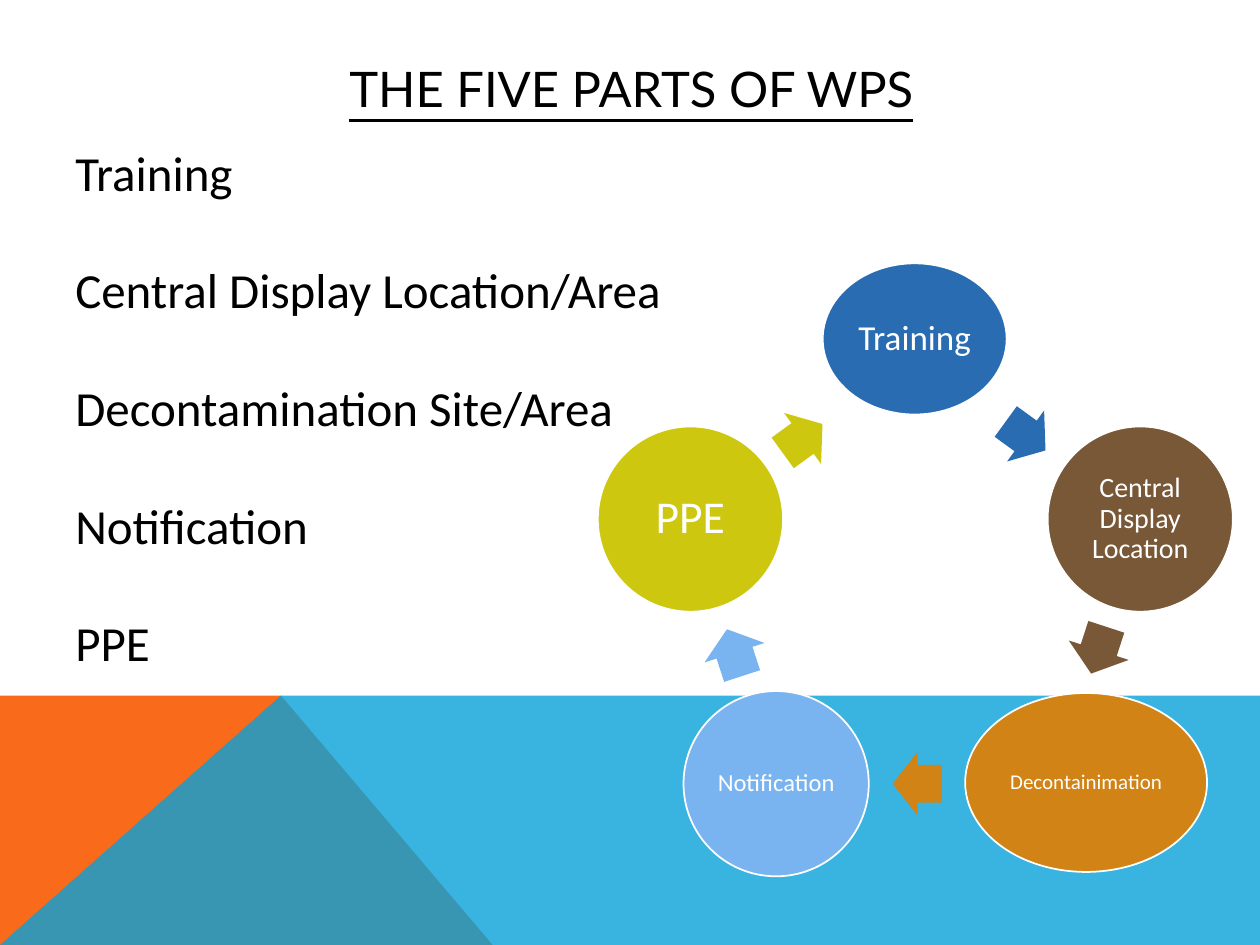
from dataclasses import dataclass

import pptx
import pptx.dml.color
import pptx.enum.shapes
import pptx.enum.text
import pptx.oxml
import pptx.oxml.ns
import pptx.util

Inches = pptx.util.Inches
Pt = pptx.util.Pt
ShapeKind = pptx.enum.shapes.MSO_SHAPE
Align = pptx.enum.text.PP_ALIGN
Anchor = pptx.enum.text.MSO_ANCHOR


@dataclass
class Stage:
    label: str
    color: str
    size: float
    center: tuple[float, float]
    extent: tuple[float, float]
    arrow_center: tuple[float, float]


STAGES = [
    Stage("Training", "2A6CB2", 20, (7.26, 2.69), (1.46, 1.2), (8.14, 3.46)),
    Stage("Central Display Location", "795837", 16, (9.05, 4.12), (1.47, 1.47), (8.72, 5.16)),
    Stage("Decontainimation", "D18316", 12, (8.62, 6.21), (1.92, 1.42), (7.28, 6.22)),
    Stage("Notification", "79B4F0", 14, (6.16, 6.22), (1.47, 1.47), (5.83, 5.18)),
    Stage("PPE", "CDC80F", 26, (5.48, 4.12), (1.47, 1.47), (6.37, 3.48)),
]
PARTS = ["Training", "Central Display Location/Area", "Decontamination Site/Area",
         "Notification", "PPE"]
FIRST_ARROW_ANGLE = 36
ARROW_STEP = 360 / len(STAGES)
ARROW_EXTENT = (0.39, 0.5)


def rgb(value: str):
    return pptx.dml.color.RGBColor.from_string(value)


def paint(shape, color: str, outline: str | None = None, alpha: int = 100) -> None:
    shape.shadow.inherit = False
    shape.fill.solid()
    shape.fill.fore_color.rgb = rgb(color)
    if alpha < 100:
        color_node = shape.fill._xPr.find(".//" + pptx.oxml.ns.qn("a:srgbClr"))
        alpha_node = pptx.oxml.parse_xml(
            f'<a:alpha {pptx.oxml.ns.nsdecls("a")} val="{alpha * 1000}"/>')
        color_node.append(alpha_node)
    if outline:
        shape.line.color.rgb = rgb(outline)
        shape.line.width = Pt(1)
    else:
        shape.line.fill.background()


def write(shape, text: str, *, size: float, font: str = "Calibri", color: str = "000000",
          align=Align.LEFT, anchor=Anchor.TOP, underline: bool = False,
          line_spacing: float = 1.0, space_after: float = 0,
          margin: float | None = None) -> None:
    frame = shape.text_frame
    frame.word_wrap = True
    frame.auto_size = pptx.enum.text.MSO_AUTO_SIZE.NONE
    frame.vertical_anchor = anchor
    if margin is not None:
        frame.margin_left = frame.margin_right = Inches(margin)
        frame.margin_top = frame.margin_bottom = Inches(margin)
    frame.text = text
    for para in frame.paragraphs:
        para.alignment = align
        para.line_spacing = line_spacing
        para.space_before = Pt(0)
        para.space_after = Pt(space_after)
        for span in para.runs:
            span.font.name = font
            span.font.size = Pt(size)
            span.font.color.rgb = rgb(color)
            if underline:
                span.font.underline = True


def add_band(page, points: list[tuple[float, float]], color: str, alpha: int = 100) -> None:
    corners = [(Inches(x), Inches(y)) for x, y in points]
    builder = page.shapes.build_freeform(*corners[0])
    builder.add_line_segments(corners[1:], close=True)
    paint(builder.convert_to_shape(), color, alpha=alpha)


def add_centered(page, kind, center: tuple[float, float], extent: tuple[float, float]):
    (x, y), (width, height) = center, extent
    return page.shapes.add_shape(kind, Inches(x - width / 2), Inches(y - height / 2),
                                 Inches(width), Inches(height))


def add_stage(page, stage: Stage, angle: float) -> None:
    oval = add_centered(page, ShapeKind.OVAL, stage.center, stage.extent)
    paint(oval, stage.color, outline="FFFFFF")
    write(oval, stage.label, size=stage.size, color="FFFFFF", align=Align.CENTER,
          anchor=Anchor.MIDDLE, line_spacing=0.9, margin=0.03)
    arrow = add_centered(page, ShapeKind.RIGHT_ARROW, stage.arrow_center, ARROW_EXTENT)
    arrow.adjustments[0] = 0.6
    arrow.adjustments[1] = 0.5
    arrow.rotation = angle
    paint(arrow, stage.color)


def main() -> None:
    deck = pptx.Presentation()
    deck.slide_width, deck.slide_height = Inches(10), Inches(7.5)
    page = deck.slides.add_slide(deck.slide_layouts[5])

    add_band(page, [(0, 7.5), (0, 5.52), (2.23, 5.52), (3.91, 7.5)], "F96A1B")
    add_band(page, [(0, 7.5), (2.23, 5.52), (10, 5.52), (10, 7.5)], "08A1D9", alpha=80)

    title = page.shapes.title
    title.left, title.top = Inches(0.9), Inches(0.4)
    title.width, title.height = Inches(8.22), Inches(0.6)
    write(title, "THE FIVE PARTS OF WPS", size=28, font="Lato", align=Align.CENTER,
          anchor=Anchor.MIDDLE, underline=True)

    box = page.shapes.add_textbox(Inches(0.5), Inches(1.08), Inches(7), Inches(4.64))
    write(box, "\n".join(PARTS), size=28, space_after=33.6)

    for index, stage in enumerate(STAGES):
        add_stage(page, stage, FIRST_ARROW_ANGLE + index * ARROW_STEP)

    deck.save("out.pptx")


if __name__ == "__main__":
    main()
